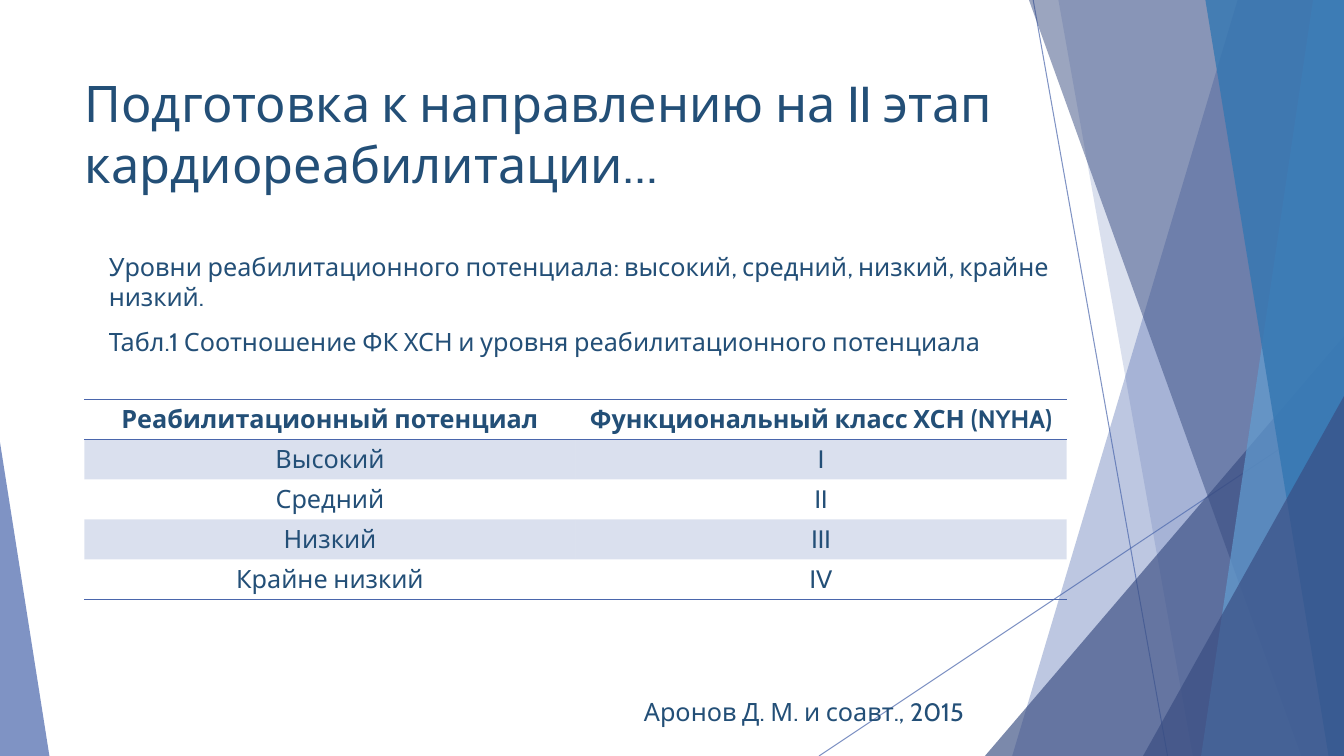
from lxml import etree
from pptx import Presentation
from pptx import util as u
from pptx.dml.color import RGBColor
from pptx.enum import shapes, text
from pptx.oxml import ns

Pt = u.Pt
WIDTH, HEIGHT = 960, 540
FONT = "Cabin"
TEXT_BLUE = RGBColor(0x23, 0x4F, 0x77)
INDIGO = RGBColor(0x4A, 0x66, 0xAC)
NAVY = RGBColor(0x38, 0x4C, 0x81)
SKY = RGBColor(0x62, 0x9D, 0xD1)
AZURE = RGBColor(0x34, 0x77, 0xB2)

LEVELS = [
    ("Реабилитационный потенциал", "Функциональный класс ХСН (NYHA)"),
    ("Высокий", "I"),
    ("Средний", "II"),
    ("Низкий", "III"),
    ("Крайне низкий", "IV"),
]


def set_opacity(properties, percent):
    for colour in properties.iter(ns.qn("a:srgbClr")):
        alpha = etree.SubElement(colour, ns.qn("a:alpha"))
        alpha.set("val", str(percent * 1000))


def paint(shape, colour, opacity):
    shape.shadow.inherit = False
    shape.line.fill.background()
    shape.fill.solid()
    shape.fill.fore_color.rgb = colour
    set_opacity(shape._element.spPr, opacity)


def add_veil(page, top_x, bottom_x, colour, opacity):
    """A full-height band from a slanted left edge to the right slide edge."""
    builder = page.shapes.build_freeform(Pt(top_x), 0)
    corners = [(WIDTH, 0), (WIDTH, HEIGHT), (bottom_x, HEIGHT)]
    builder.add_line_segments([(Pt(x), Pt(y)) for x, y in corners], close=True)
    paint(builder.convert_to_shape(), colour, opacity)


def add_wedge(page, left, top, width, tip, colour, opacity):
    """A right triangle standing on the bottom edge of the slide."""
    wedge = page.shapes.add_shape(
        shapes.MSO_SHAPE.ISOSCELES_TRIANGLE,
        Pt(left), Pt(top), Pt(width), Pt(HEIGHT - top))
    wedge.adjustments[0] = tip
    paint(wedge, colour, opacity)


def add_ray(page, x1, y1, x2, y2):
    ray = page.shapes.add_connector(
        shapes.MSO_CONNECTOR.STRAIGHT, Pt(x1), Pt(y1), Pt(x2), Pt(y2))
    ray.line.color.rgb = INDIGO
    ray.line.width = Pt(0.75)
    properties = ray._element.spPr
    set_opacity(properties, 70)
    etree.SubElement(properties, ns.qn("a:effectLst"))


def add_span(para, words, size, bold=False):
    span = para.add_run()
    span.text = words
    span.font.name = FONT
    span.font.size = Pt(size)
    span.font.bold = bold
    span.font.color.rgb = TEXT_BLUE


def add_text(page, left, top, width, height, paragraphs, size):
    box = page.shapes.add_textbox(Pt(left), Pt(top), Pt(width), Pt(height))
    frame = box.text_frame
    frame.word_wrap = True
    for index, words in enumerate(paragraphs):
        para = frame.add_paragraph() if index else frame.paragraphs[0]
        if index:
            para.space_before = Pt(10)
        add_span(para, words, size)


def set_borders(cell, ruled_sides):
    properties = cell._tc.get_or_add_tcPr()
    for side in "LRTB":
        border = etree.SubElement(properties, ns.qn("a:ln" + side))
        if side in ruled_sides:
            border.set("w", str(Pt(1)))
            fill = etree.SubElement(border, ns.qn("a:solidFill"))
            etree.SubElement(fill, ns.qn("a:srgbClr")).set("val", str(INDIGO))
        else:
            border.set("w", "0")
            etree.SubElement(border, ns.qn("a:noFill"))


def fill_cell(cell, words, row, last_row):
    cell.margin_left = cell.margin_right = Pt(8.64)
    cell.margin_top = cell.margin_bottom = 0
    para = cell.text_frame.paragraphs[0]
    para.alignment = text.PP_ALIGN.CENTER
    para.line_spacing = 1.15
    para.space_after = Pt(8)
    add_span(para, words, 18, bold=row == 0)
    set_borders(cell, {0: "TB", 1: "T", last_row: "B"}.get(row, ""))
    if row % 2:
        cell.fill.solid()
        cell.fill.fore_color.rgb = INDIGO
        # Only the fill is a direct child; borders keep full opacity
        set_opacity(cell._tc.tcPr.find(ns.qn("a:solidFill")), 20)
    else:
        cell.fill.background()


def add_levels_table(page, left, top, width, row_height):
    count = len(LEVELS)
    table = page.shapes.add_table(
        count, 2, Pt(left), Pt(top), Pt(width), Pt(row_height * count)).table
    table.first_row = table.horz_banding = False
    for row, entries in enumerate(LEVELS):
        table.rows[row].height = Pt(row_height)
        for column, words in enumerate(entries):
            fill_cell(table.cell(row, column), words, row, count - 1)


def add_facets(page):
    add_ray(page, 738, 0, 834, HEIGHT)
    add_ray(page, WIDTH, 290, 585, HEIGHT)
    add_veil(page, 884, 723, INDIGO, 36)
    add_veil(page, 756, 852, INDIGO, 20)
    add_wedge(page, 703.5, 240, 256.5, 1, NAVY, 66)
    add_veil(page, 735, 929.5, NAVY, 50)
    add_veil(page, 938, 858, SKY, 70)
    add_veil(page, 861, 949, AZURE, 80)
    add_wedge(page, 816.5, 283, 143.5, 1, NAVY, 66)
    add_wedge(page, 0, 316, 35.3, 0, INDIGO, 70)


def main():
    deck = Presentation()
    deck.slide_width, deck.slide_height = Pt(WIDTH), Pt(HEIGHT)
    page = deck.slides.add_slide(deck.slide_layouts[6])

    # Background facets
    add_facets(page)

    # Title and introduction
    add_text(page, 53.3, 48.2, 677, 104,
             ["Подготовка к направлению на II этап кардиореабилитации…"], 36)
    add_text(page, 70.6, 176, 691, 89, [
        "Уровни реабилитационного потенциала: высокий, средний, низкий, "
        "крайне низкий.",
        "Табл.1 Соотношение ФК ХСН и уровня реабилитационного потенциала",
    ], 18)

    # Table of levels and its source
    add_levels_table(page, 60.3, 285.2, 701.6, 28.6)
    add_text(page, 452.9, 494, 335.5, 29, ["Аронов Д. М. и соавт., 2015"], 18)

    deck.save("out.pptx")


if __name__ == "__main__":
    main()
